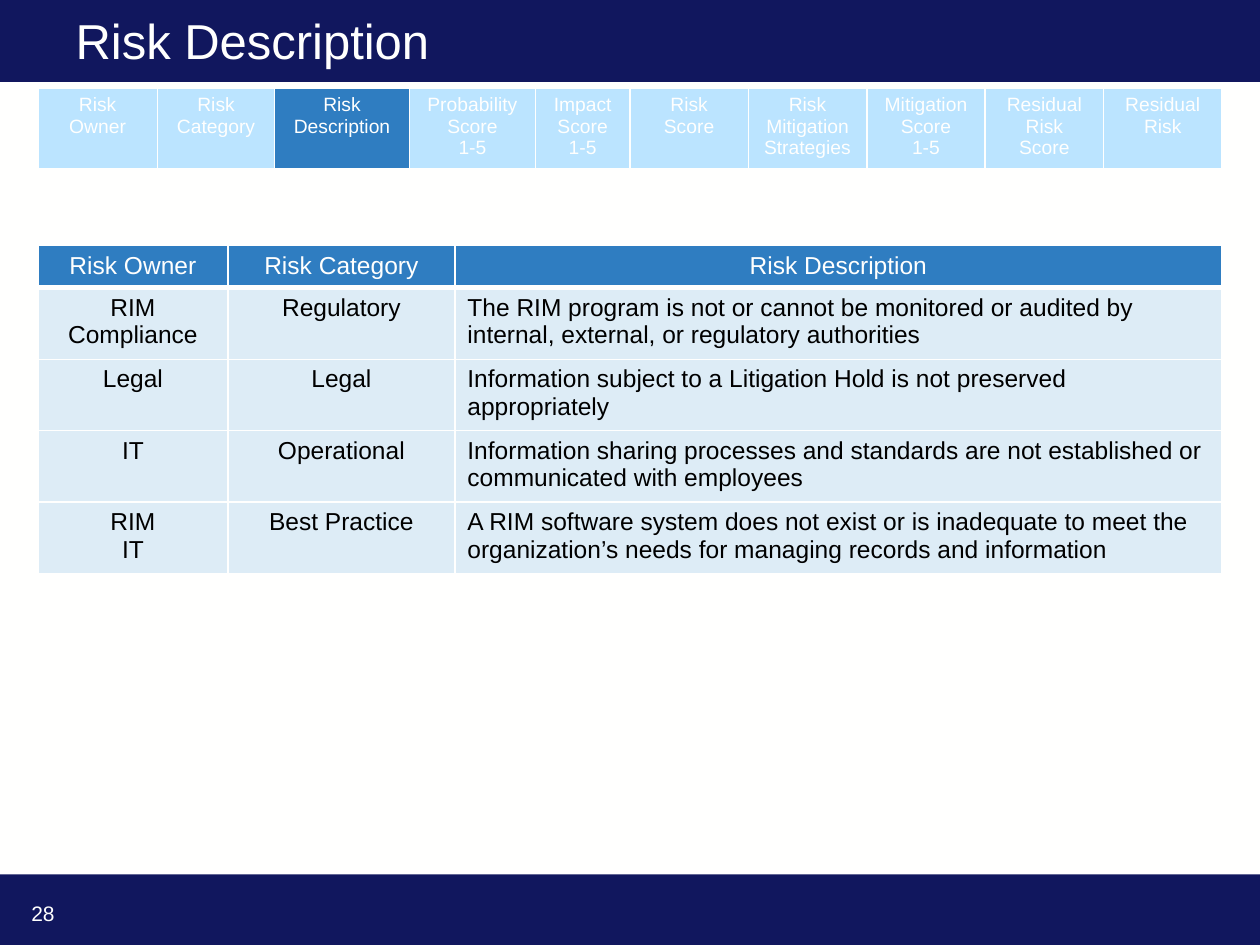
from lxml.etree import SubElement
from pptx import Presentation
from pptx.dml.color import RGBColor
from pptx.enum.shapes import MSO_SHAPE as Shape
from pptx.enum.text import MSO_ANCHOR as Anchor, PP_ALIGN as Align
from pptx.oxml.ns import qn
from pptx.util import Inches, Pt

NAVY, BLUE, SKY, PALE = "11175E", "2F7DC1", "BBE4FF", "DDECF6"
WHITE, BLACK = "FFFFFE", "000000"
MARGIN = 0.3


def paint(target, color):
    """Fill a shape, cell or background, or colour a font."""
    fill = target.fill
    fill.solid()
    fill.fore_color.rgb = RGBColor.from_string(color)


def format_text(frame, size, color, align=Align.LEFT):
    for paragraph in frame.paragraphs:
        paragraph.alignment = align
        values = {"name": "Arial", "size": Pt(size), "bold": False}
        for name, value in values.items():
            setattr(paragraph.font, name, value)
        paint(paragraph.font, color)


presentation = Presentation()
presentation.slide_width, presentation.slide_height = Inches(10), Inches(7.5)
width, height = presentation.slide_width, presentation.slide_height
slide = presentation.slides.add_slide(presentation.slide_layouts[5])
paint(slide.background, WHITE)

# Header and footer bands, kept behind the title
for top, band_height in ((0, 0.65), (6.94, 0.56)):
    band = slide.shapes.add_shape(
        Shape.RECTANGLE, 0, Inches(top), width, Inches(band_height))
    band.shadow.inherit = False
    paint(band, NAVY)
    band.line.fill.background()
    slide.shapes._spTree.insert(2, band._element)

# Title
title = slide.shapes.title
placement = {"left": width * 0.05, "top": Inches(0.12),
             "width": width * 0.9, "height": Inches(0.4)}
for name, value in placement.items():
    setattr(title, name, int(value))
title.text_frame.text = "Risk Description"
title.text_frame.vertical_anchor = Anchor.MIDDLE
format_text(title.text_frame, 28, WHITE)

# Page number
number = slide.shapes.add_textbox(
    Inches(0.15), Inches(7.1), Inches(2.69), Inches(0.4))
number.text_frame.word_wrap = True
number.text_frame.text = "28"
format_text(number.text_frame, 12, WHITE)

# Table contents; \v is a line break inside a cell
steps = ["Risk Owner", "Risk Category", "Risk Description",
         "Probability Score\v1-5", "Impact Score\v1-5", "Risk Score",
         "Risk Mitigation Strategies", "Mitigation Score\v1-5",
         "Residual Risk Score", "Residual Risk"]
risks = [
    steps[:3],
    ["RIM\vCompliance", "Regulatory",
     "The RIM program is not or cannot be monitored or audited by internal, "
     "external, or regulatory authorities"],
    ["Legal", "Legal",
     "Information subject to a Litigation Hold is not preserved appropriately"],
    ["IT", "Operational",
     "Information sharing processes and standards are not established or "
     "communicated with employees"],
    ["RIM\vIT", "Best Practice",
     "A RIM software system does not exist or is inadequate to meet the "
     "organization’s needs for managing records and information"],
]
current_step = 2

# Step strip and risk table: top, rows, column widths, row heights, text size
tables = [
    (0.7, [steps], [0.95, 0.93, 1.07, 1, 0.75] + [0.94] * 5, [0.6], 11),
    (1.95, risks, [1.51, 1.8, 6.09], [0.32] + [0.54] * 4, 14),
]
for top, rows, column_widths, row_heights, size in tables:
    table = slide.shapes.add_table(
        len(rows), len(column_widths), Inches(MARGIN), Inches(top),
        width - 2 * Inches(MARGIN), Inches(sum(row_heights))).table
    table.first_row = table.horz_banding = False
    for column, column_width in zip(table.columns, column_widths):
        column.width = Inches(column_width)
    for row, row_height in zip(table.rows, row_heights):
        row.height = Inches(row_height)

    for row_index, row in enumerate(rows):
        is_header = row_index == 0
        for column_index, text in enumerate(row):
            cell = table.cell(row_index, column_index)
            cell.text = text
            is_prose = not is_header and column_index == 2
            format_text(cell.text_frame, size, WHITE if is_header else BLACK,
                        Align.LEFT if is_prose else Align.CENTER)

            # White borders, heavier below a header
            properties = cell._tc.get_or_add_tcPr()
            for side in "LRTB":
                points = 3 if is_header and side == "B" else 1
                line = SubElement(properties, qn(f"a:ln{side}"), w=str(Pt(points)))
                SubElement(SubElement(line, qn("a:solidFill")),
                           qn("a:srgbClr"), val=WHITE)

            if not is_header:
                paint(cell, PALE)
            elif rows is risks or column_index == current_step:
                paint(cell, BLUE)
            else:
                paint(cell, SKY)

presentation.save("out.pptx")
